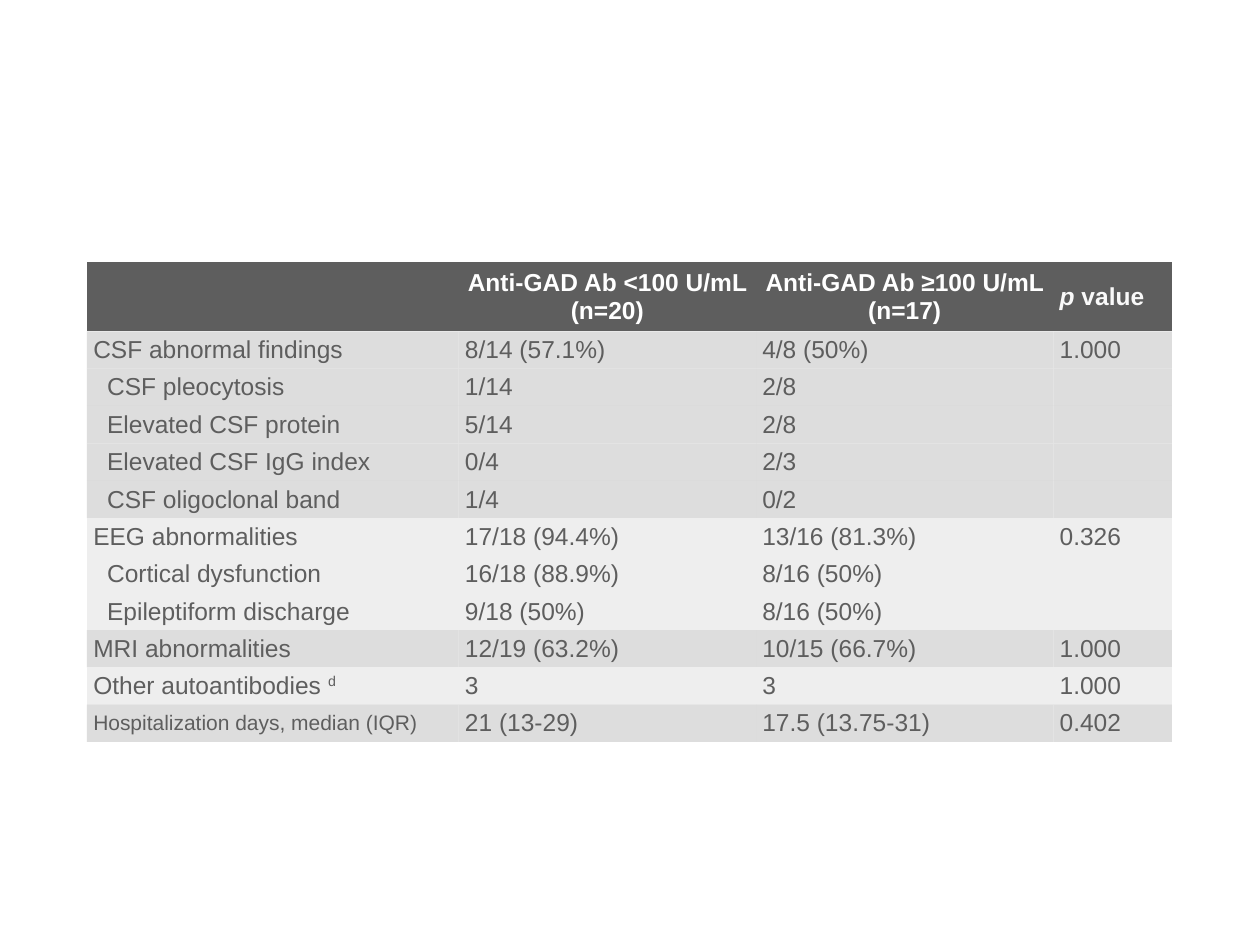
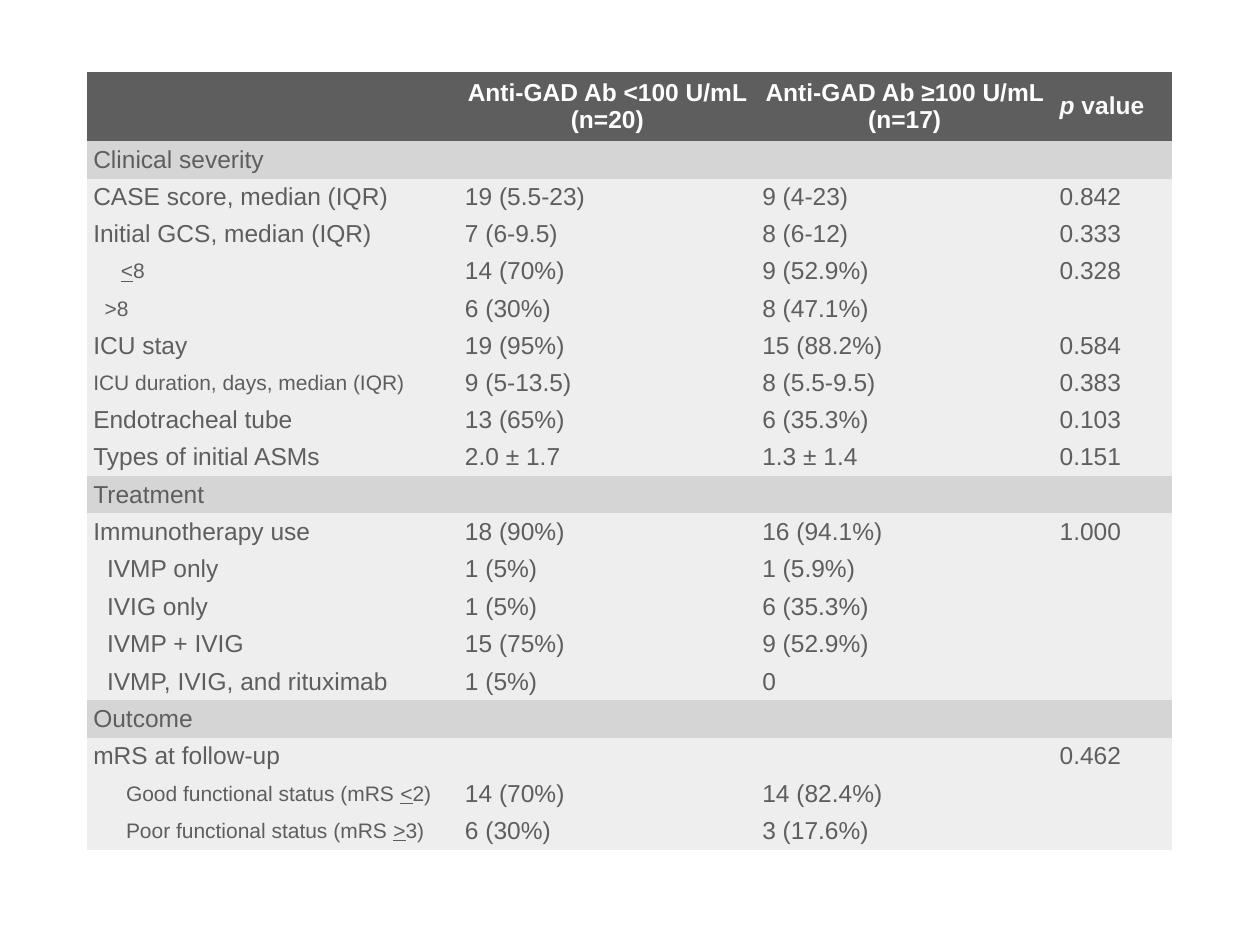
"""Build two slides of tables comparing patients by anti-GAD antibody level."""
from lxml.etree import SubElement
from pptx import Presentation
from pptx.dml.color import RGBColor
from pptx.enum.text import MSO_ANCHOR, PP_ALIGN
from pptx.oxml.ns import qn
from pptx.util import Inches, Pt

WHITE = RGBColor(0xFF, 0xFF, 0xFF)
OFF_WHITE = RGBColor(0xF9, 0xF9, 0xF9)
DARK = RGBColor(0x5E, 0x5E, 0x5E)
MID = RGBColor(0xD5, 0xD5, 0xD5)
LIGHT = RGBColor(0xEE, 0xEE, 0xEE)
FONT = "Arial"
NO_STYLE = "{2D5ABB26-0587-4C30-8999-92F81FD0307C}"
LEFT, HEADER_HEIGHT = 0.69, 0.55
COLUMN_WIDTHS = [2.95, 2.36, 2.36, 0.94]
STEP = 0.11

# A bar in a text switches the special run style on and off.
HEADER = ["", "Anti-GAD Ab <100 U/mL (n=20)", "Anti-GAD Ab ≥100 U/mL (n=17)", "|p| value"]

FINDINGS = [
    (MID, 0, 14, "CSF abnormal findings", "8/14 (57.1%)", "4/8 (50%)", "1.000"),
    (MID, STEP, 14, "CSF pleocytosis", "1/14", "2/8", ""),
    (MID, STEP, 14, "Elevated CSF protein", "5/14", "2/8", ""),
    (MID, STEP, 14, "Elevated CSF IgG index", "0/4", "2/3", ""),
    (MID, STEP, 14, "CSF oligoclonal band", "1/4", "0/2", ""),
    (LIGHT, 0, 14, "EEG abnormalities", "17/18 (94.4%)", "13/16 (81.3%)", "0.326"),
    (LIGHT, STEP, 14, "Cortical dysfunction", "16/18 (88.9%)", "8/16 (50%)", ""),
    (LIGHT, STEP, 14, "Epileptiform discharge", "9/18 (50%)", "8/16 (50%)", ""),
    (MID, 0, 14, "MRI abnormalities", "12/19 (63.2%)", "10/15 (66.7%)", "1.000"),
    (LIGHT, 0, 14, "Other autoantibodies |d|", "3", "3", "1.000"),
    (MID, 0, 12, "Hospitalization days, median (IQR)", "21 (13-29)", "17.5 (13.75-31)", "0.402"),
]
OUTCOMES = [
    (MID, 0, 14, "Clinical severity", "", "", ""),
    (LIGHT, 0, 14, "CASE score, median (IQR)", "19 (5.5-23)", "9 (4-23)", "0.842"),
    (LIGHT, 0, 14, "Initial GCS, median (IQR)", "7 (6-9.5)", "8 (6-12)", "0.333"),
    (LIGHT, 0.22, 12, "|<|8", "14 (70%)", "9 (52.9%)", "0.328"),
    (LIGHT, 0.09, 12, ">8", "6 (30%)", "8 (47.1%)", ""),
    (LIGHT, 0, 14, "ICU stay", "19 (95%)", "15 (88.2%)", "0.584"),
    (LIGHT, 0, 12, "ICU duration, days, median (IQR)", "9 (5-13.5)", "8 (5.5-9.5)", "0.383"),
    (LIGHT, 0, 14, "Endotracheal tube", "13 (65%)", "6 (35.3%)", "0.103"),
    (LIGHT, 0, 14, "Types of initial ASMs", "2.0 ± 1.7", "1.3 ± 1.4", "0.151"),
    (MID, 0, 14, "Treatment", "", "", ""),
    (LIGHT, 0, 14, "Immunotherapy use", "18 (90%)", "16 (94.1%)", "1.000"),
    (LIGHT, STEP, 14, "IVMP only", "1 (5%)", "1 (5.9%)", ""),
    (LIGHT, STEP, 14, "IVIG only", "1 (5%)", "6 (35.3%)", ""),
    (LIGHT, STEP, 14, "IVMP + IVIG", "15 (75%)", "9 (52.9%)", ""),
    (LIGHT, STEP, 14, "IVMP, IVIG, and rituximab", "1 (5%)", "0", ""),
    (MID, 0, 14, "Outcome", "", "", ""),
    (LIGHT, 0, 14, "mRS at follow-up", "", "", "0.462"),
    (LIGHT, 0.26, 12, "Good functional status (mRS |<|2)", "14 (70%)", "14 (82.4%)", ""),
    (LIGHT, 0.26, 12, "Poor functional status (mRS |>|3)", "6 (30%)", "3 (17.6%)", ""),
]


def fill_cell(cell, text, fill, color, size=14, bold=False, indent=0, alpha=100):
    """Fill a cell and write its text, run by run."""
    cell.fill.solid()
    cell.fill.fore_color.rgb = fill
    if alpha < 100:
        fill_color = cell._tc.tcPr.find(".//" + qn("a:srgbClr"))
        SubElement(fill_color, qn("a:alpha"), val=str(alpha * 1000))
    cell.vertical_anchor = MSO_ANCHOR.MIDDLE
    cell.margin_left = cell.margin_right = Inches(0.05)
    cell.margin_top = cell.margin_bottom = Inches(0.03)
    paragraph = cell.text_frame.paragraphs[0]
    if indent:
        paragraph._p.get_or_add_pPr().set("marL", str(Inches(indent)))
    if not text:
        SubElement(paragraph._p, qn("a:endParaRPr"), sz=str(size * 100))
    for index, part in enumerate(text.split("|")):
        if not part:
            continue
        run = paragraph.add_run()
        run.text = part
        font = run.font
        font.name, font.size, font.bold = FONT, Pt(size), bold
        font.color.rgb = color
        if index % 2 and part == "p":
            font.italic = True
        elif index % 2 and part == "d":
            run._r.get_or_add_rPr().set("baseline", "32000")
        elif index % 2:
            font.underline = True


presentation = Presentation()
presentation.slide_width, presentation.slide_height = Inches(10), Inches(7.5)

for rows, top, height, mid_alpha in ((FINDINGS, 2.08, 3.8, 80), (OUTCOMES, 0.57, 6.16, 100)):
    slide = presentation.slides.add_slide(presentation.slide_layouts[6])
    frame = slide.shapes.add_table(len(rows) + 1, len(COLUMN_WIDTHS), Inches(LEFT), Inches(top),
                                   Inches(sum(COLUMN_WIDTHS)), Inches(height))
    table = frame.table
    table.horz_banding = False
    table._tbl.tblPr.find(qn("a:tableStyleId")).text = NO_STYLE
    for column, width in zip(table.columns, COLUMN_WIDTHS):
        column.width = Inches(width)
    for row in table.rows:
        row.height = Inches((height - HEADER_HEIGHT) / len(rows))
    table.rows[0].height = Inches(HEADER_HEIGHT)

    for column_index, text in enumerate(HEADER):
        cell = table.cell(0, column_index)
        fill_cell(cell, text, DARK, OFF_WHITE if column_index == 3 else WHITE, bold=True)
        if column_index in (1, 2):
            cell.text_frame.paragraphs[0].alignment = PP_ALIGN.CENTER

    for row_index, (fill, indent, label_size, label, *values) in enumerate(rows, start=1):
        alpha = mid_alpha if fill == MID else 100
        fill_cell(table.cell(row_index, 0), label, fill, DARK, label_size, indent=indent, alpha=alpha)
        for column_index, value in enumerate(values, start=1):
            fill_cell(table.cell(row_index, column_index), value, fill, DARK, alpha=alpha)

presentation.save("out.pptx")
